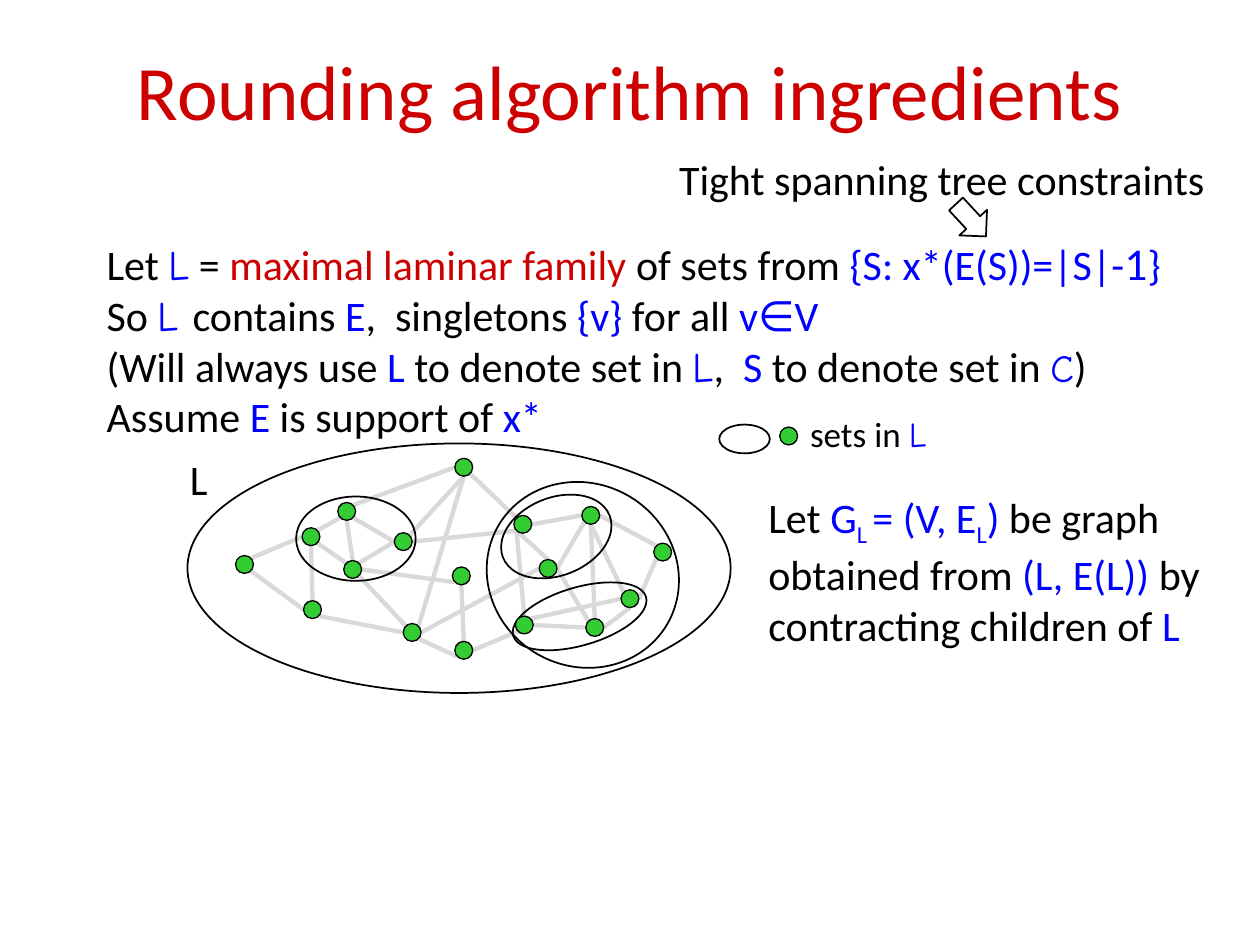
from lxml import etree
from pptx import Presentation
from pptx.dml.color import RGBColor
from pptx.enum.shapes import MSO_CONNECTOR, MSO_SHAPE
from pptx.enum.text import MSO_ANCHOR, PP_ALIGN
from pptx.oxml.ns import qn
from pptx.util import Cm, Pt

BLACK = RGBColor(0x00, 0x00, 0x00)
RED = RGBColor(0xCC, 0x00, 0x00)
BLUE = RGBColor(0x00, 0x00, 0xFF)
GREEN = RGBColor(0x33, 0xCC, 0x33)
GRAY = RGBColor(0xD9, 0xD9, 0xD9)
ELLIPSE, ARROW = MSO_SHAPE.OVAL, MSO_SHAPE.RIGHT_ARROW
STRAIGHT = MSO_CONNECTOR.STRAIGHT
CENTER, MIDDLE = PP_ALIGN.CENTER, MSO_ANCHOR.MIDDLE
TEXT_FONT, SCRIPT_FONT = "Calibri", "Comic Neue"
SCRIPT = {"font": SCRIPT_FONT}
SUBSCRIPT = {"baseline": -25000}

presentation = Presentation()
presentation.slide_width, presentation.slide_height = Cm(25.4), Cm(19.05)
slide = presentation.slides.add_slide(presentation.slide_layouts[5])


def add_text(left, top, width, height, size, paragraphs, wrap=False):
    """Add a text box; each run is (text, colour) with optional overrides."""
    box = slide.shapes.add_textbox(Cm(left), Cm(top), Cm(width), Cm(height))
    frame = box.text_frame
    frame.word_wrap = wrap
    for index, runs in enumerate(paragraphs):
        paragraph = frame.add_paragraph() if index else frame.paragraphs[0]
        for text, color, *overrides in runs:
            style = overrides[0] if overrides else {}
            run = paragraph.add_run()
            run.text = text
            run.font.name = style.get("font", TEXT_FONT)
            run.font.size = Pt(style.get("size", size))
            run.font.color.rgb = color
            if "baseline" in style:
                run.font._element.set("baseline", str(style["baseline"]))


def add_outline(preset, left, top, width, height, rotation=0, fill=None, weight=1):
    """Add a black-outlined shape, unfilled unless a colour is given."""
    shape = slide.shapes.add_shape(preset, Cm(left), Cm(top), Cm(width), Cm(height))
    shape.rotation = rotation
    shape.shadow.inherit = False
    shape.line.color.rgb = BLACK
    shape.line.width = Pt(weight)
    if fill is None:
        shape.fill.background()
    else:
        shape.fill.solid()
        shape.fill.fore_color.rgb = fill


# Title
title = slide.shapes.title
title.left, title.top, title.width, title.height = Cm(1.9), Cm(0.64), Cm(21.6), Cm(2.33)
title.text_frame.vertical_anchor = MIDDLE
paragraph = title.text_frame.paragraphs[0]
paragraph.alignment = CENTER
run = paragraph.add_run()
run.text = "Rounding algorithm ingredients"
run.font.name, run.font.size, run.font.color.rgb = TEXT_FONT, Pt(44), RED

# Definition of the laminar family
add_text(1.9, 4.62, 22.45, 4.45, 24, [
    [("Let ", BLACK), ("L", BLUE, SCRIPT), (" = ", BLACK),
     ("maximal laminar family", RED), (" of sets from ", BLACK),
     ("{S: x*(E(S))=|S|-", BLUE), ("1", BLUE, {"size": 26}), ("}", BLUE)],
    [("So ", BLACK), ("L ", BLUE, SCRIPT), ("contains ", BLACK), ("E", BLUE),
     (",  singletons ", BLACK), ("{v}", BLUE), (" for all ", BLACK), ("v∈V", BLUE)],
    [("(Will always use ", BLACK), ("L", BLUE), (" to denote set in ", BLACK),
     ("L", BLUE, SCRIPT), (",  ", BLACK), ("S", BLUE), (" to denote set in ", BLACK),
     ("C", BLUE, {"font": SCRIPT_FONT, "size": 22}), (")", BLACK)],
    [("Assume ", BLACK), ("E", BLUE), (" is support of ", BLACK), ("x*", BLUE)],
], wrap=True)

# Remark on the constraints
add_text(13.44, 2.97, 11.1, 1.27, 24, [[("Tight spanning tree constraints", BLACK)]])
add_outline(ARROW, 19.13, 4.06, 0.89, 0.76, rotation=47.2)

# Graph: node centres, and edges between compass points on the nodes
NODE_SIZE = 0.36
RADIUS = NODE_SIZE / 2
DIAGONAL = RADIUS * 0.71
COMPASS = {
    "N": (0, -RADIUS), "S": (0, RADIUS), "E": (RADIUS, 0), "W": (-RADIUS, 0),
    "NE": (DIAGONAL, -DIAGONAL), "NW": (-DIAGONAL, -DIAGONAL),
    "SE": (DIAGONAL, DIAGONAL), "SW": (-DIAGONAL, DIAGONAL),
}
nodes = {
    "a": (4.93, 11.38), "b": (6.27, 10.82), "c": (6.3, 12.29), "d": (6.99, 10.31),
    "e": (7.11, 11.48), "f": (8.31, 12.75), "g": (10.54, 10.57), "h": (11.91, 10.39),
    "i": (11.05, 11.46), "j": (9.3, 11.61), "k": (10.57, 12.6), "l": (12.7, 12.07),
    "m": (9.35, 9.42), "n": (11.99, 12.65), "o": (9.35, 13.11), "p": (13.36, 11.13),
    "q": (8.13, 10.92),
}
edges = """
    f.E-i.W g.SW-k.N g.NW-m.SE a.SE-c.W a.NE-b.W b.S-c.N b.SE-e.NW e.E-j.SW
    d.NE-m.W c.SE-f.W e.SE-f.NW h.E-p.NW g.E-h.W i.E-h.SW i.E-n.NW k.E-n.W
    k.NE-l.W h.S-l.NW n.E-l.S l.E-p.SW j.S-o.N d.SE-q.W d.S-e.N e.NE-q.W
    q.E-g.SW q.NE-m.S m.S-f.NE f.SE-o.SW o.E-k.SW h.S-n.N g.SW-i.N b.NE-d.SW
"""
for edge in edges.split():
    points = []
    for end in edge.split("-"):
        node, side = end.split(".")
        points += [Cm(nodes[node][axis] + COMPASS[side][axis]) for axis in (0, 1)]
    connector = slide.shapes.add_connector(STRAIGHT, *points)
    connector.line.color.rgb = GRAY
    connector.line.width = Pt(2.5)
    etree.SubElement(connector._element.spPr, qn("a:effectLst"))

# Nested sets, and the ellipse of the legend
for ellipse in [
    (3.78, 8.94, 10.95, 5.03),
    (10.06, 10.03, 2.31, 1.57, 338.5),
    (5.97, 10.01, 2.41, 1.7),
    (10.29, 11.84, 2.79, 1.17, 343.7),
    (9.78, 9.75, 3.94, 3.68, 30.3),
    (14.5, 8.56, 1.02, 0.58),
]:
    add_outline(ELLIPSE, *ellipse)

# Nodes, and the dot of the legend
for x, y in [*nodes.values(), (15.9, 8.79)]:
    add_outline(ELLIPSE, x - RADIUS, y - RADIUS, NODE_SIZE, NODE_SIZE,
                fill=GREEN, weight=0.75)

# Graph labels
add_text(3.58, 9.02, 0.94, 1.27, 24, [[("L", BLACK)]])
add_text(16.08, 8.2, 3.53, 1.12, 20, [[("sets in ", BLACK), ("L", BLUE, SCRIPT)]])

# Contracted graph
add_text(15.24, 9.78, 9.78, 3.33, 24, [
    [("Let ", BLACK), ("G", BLUE), ("L ", BLUE, SUBSCRIPT), ("= (V, E", BLUE),
     ("L", BLUE, SUBSCRIPT), (") ", BLUE), ("be graph obtained from ", BLACK),
     ("(L, E(L)) ", BLUE), ("by contracting children of ", BLACK), ("L", BLUE)],
], wrap=True)

presentation.save("out.pptx")
